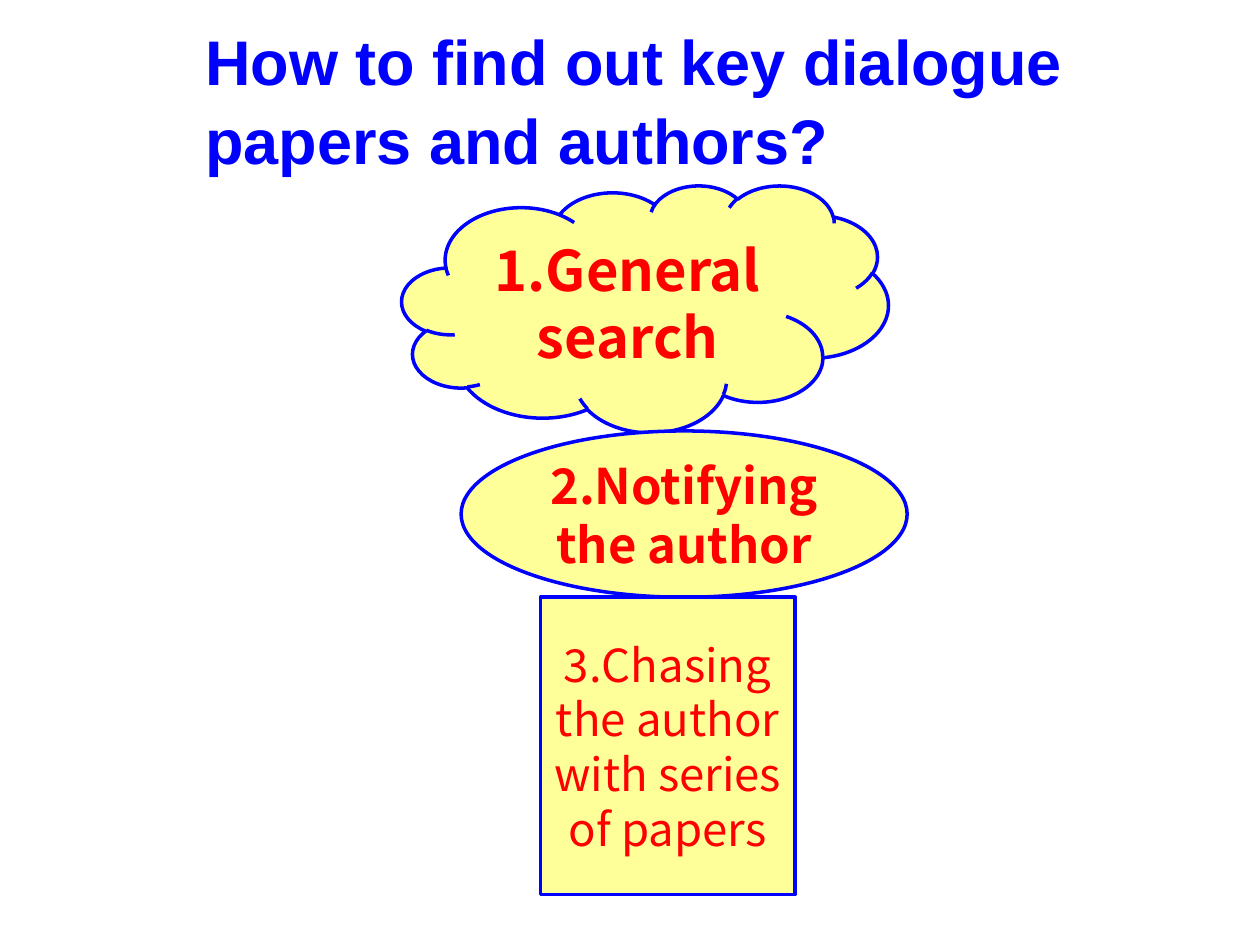
from pptx import Presentation
from pptx.dml.color import RGBColor
from pptx.enum.shapes import MSO_SHAPE
from pptx.enum.text import MSO_ANCHOR, PP_ALIGN
from pptx.util import Inches, Pt

BLUE = RGBColor(0x00, 0x00, 0xFF)
RED = RGBColor(0xFF, 0x00, 0x00)
YELLOW = RGBColor(0xFF, 0xFF, 0x99)
CLOUD, OVAL, RECTANGLE = MSO_SHAPE.CLOUD, MSO_SHAPE.OVAL, MSO_SHAPE.RECTANGLE
MIDDLE = MSO_ANCHOR.MIDDLE
LEFT, CENTER = PP_ALIGN.LEFT, PP_ALIGN.CENTER


class SlideBuilder:
    title_font = "Arial"
    step_font = "Noto Sans CJK SC"

    def __init__(self, slide):
        self.slide = slide

    def add_lines(self, frame, lines, font, size, color, bold, align, spacing):
        frame.word_wrap = True
        frame.vertical_anchor = MIDDLE
        for index, line in enumerate(lines):
            paragraph = frame.add_paragraph() if index else frame.paragraphs[0]
            paragraph.alignment = align
            paragraph.line_spacing = spacing
            run = paragraph.add_run()
            run.text = line
            run.font.name = font
            run.font.size = Pt(size)
            run.font.bold = bold
            run.font.color.rgb = color

    def title(self, text, left, top, width, height):
        heading = self.slide.shapes.title
        heading.left, heading.top = Inches(left), Inches(top)
        heading.width, heading.height = Inches(width), Inches(height)
        self.add_lines(heading.text_frame, [text], self.title_font, 36, BLUE,
                       True, LEFT, 1.05)

    def step(self, outline, box, lines, size, bold):
        step = self.slide.shapes.add_shape(outline, *map(Inches, box))
        step.shadow.inherit = False
        step.fill.solid()
        step.fill.fore_color.rgb = YELLOW
        step.line.color.rgb = BLUE
        step.line.width = Pt(2)
        self.add_lines(step.text_frame, lines, self.step_font, size, RED,
                       bold, CENTER, Pt(round(size * 1.2, 1)))


def main():
    deck = Presentation()
    deck.slide_width, deck.slide_height = Inches(10), Inches(7.5)
    builder = SlideBuilder(deck.slides.add_slide(deck.slide_layouts[5]))
    builder.title("How to find out key dialogue papers and authors?",
                  1.53, 0.05, 7.24, 1.45)
    steps = [
        (CLOUD, (3.19, 1.47, 3.86, 1.96), ["1.General search"], 32, True),
        (OVAL, (3.66, 3.42, 3.54, 1.32), ["2.Notifying the author"], 28, True),
        (RECTANGLE, (4.29, 4.74, 2.02, 2.36),
         ["3.Chasing the author", "with series of papers"], 26, False),
    ]
    for step in steps:
        builder.step(*step)
    deck.save("out.pptx")


if __name__ == "__main__":
    main()
